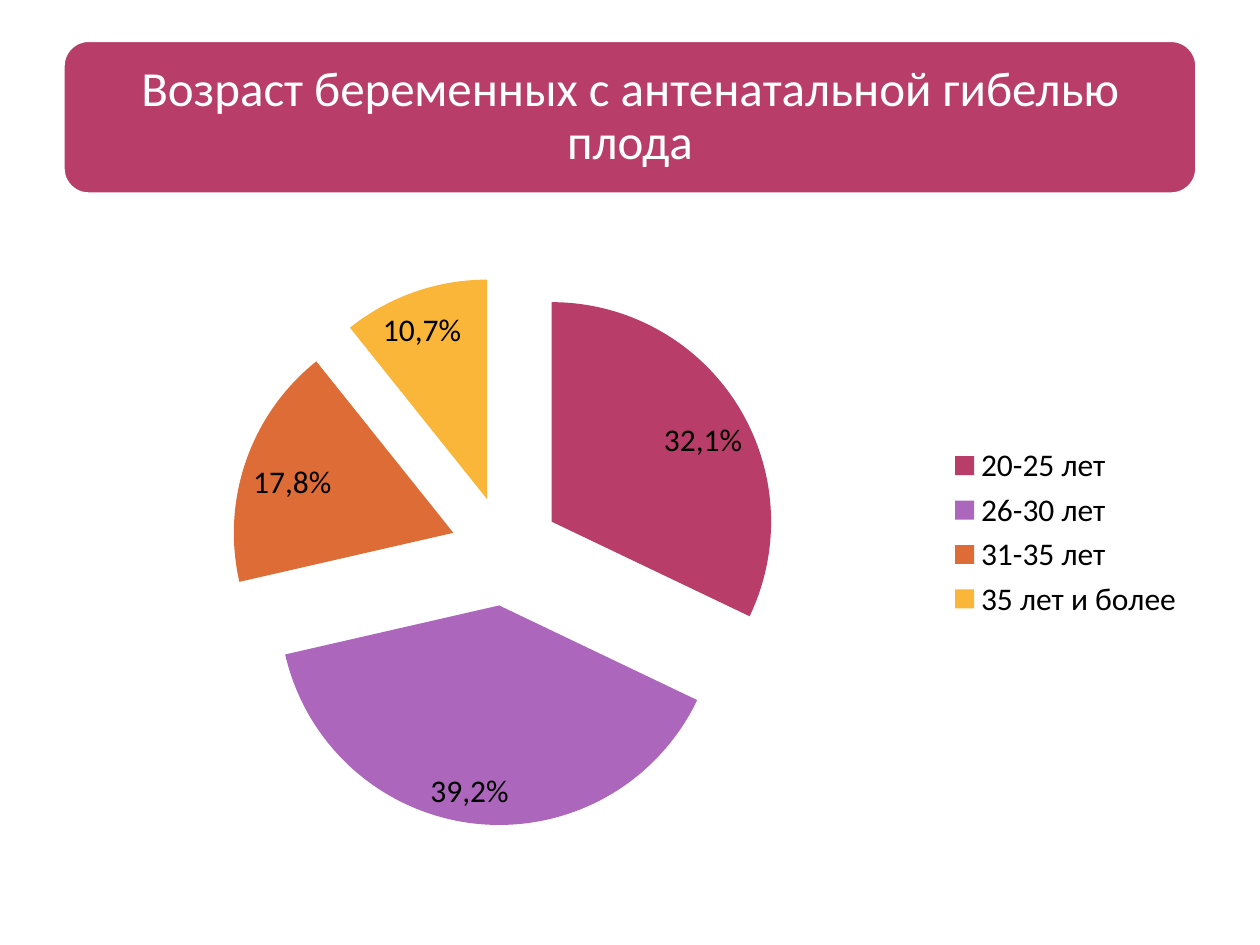
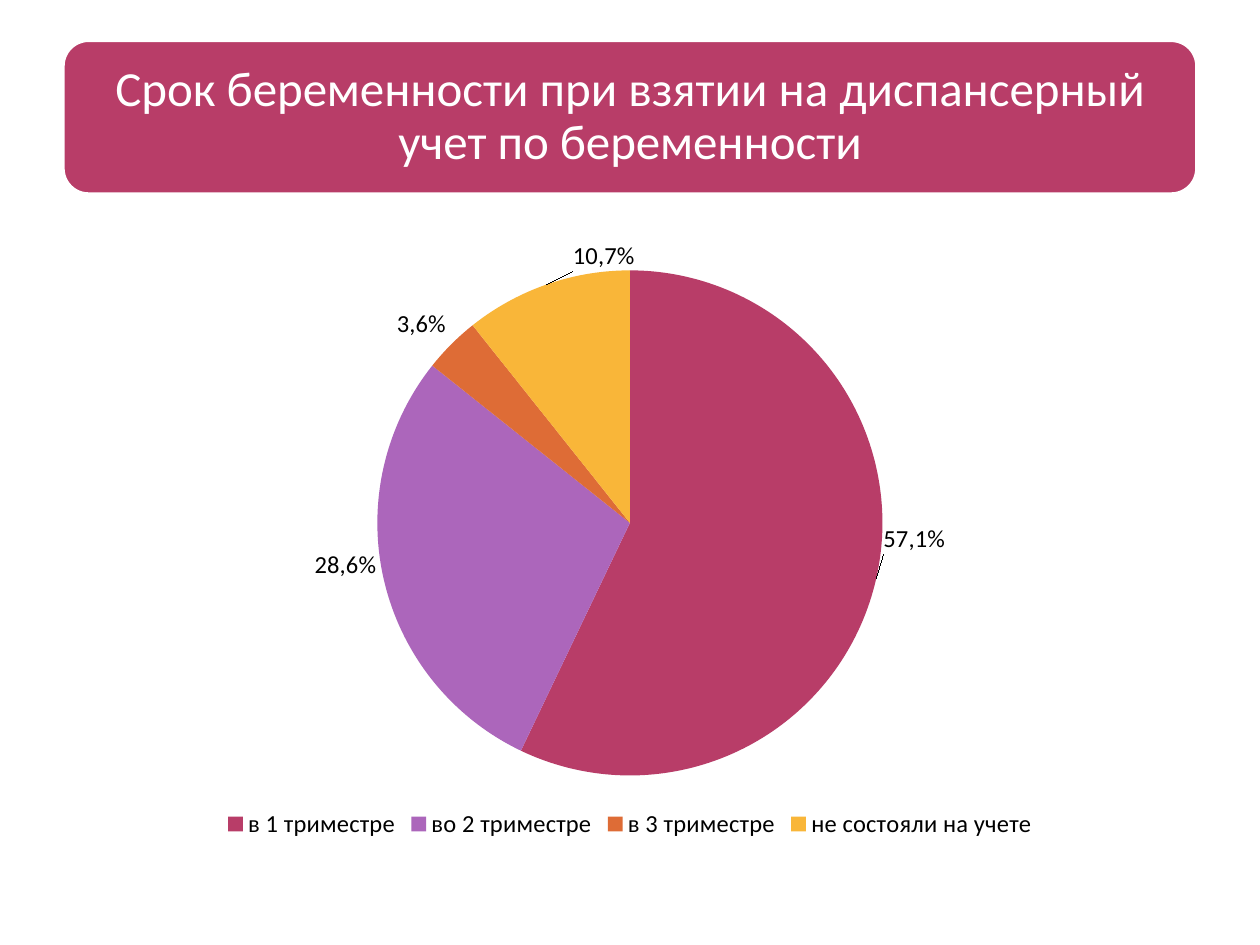
from pptx import Presentation
from pptx.chart.data import CategoryChartData as ChartData
from pptx.dml.color import RGBColor as RGB
from pptx.enum.chart import XL_CHART_TYPE as KIND, XL_LABEL_POSITION as SPOT
from pptx.enum.chart import XL_LEGEND_POSITION as SIDE
from pptx.enum.shapes import MSO_SHAPE as SHAPE
from pptx.enum.text import MSO_ANCHOR as ANCHOR, PP_ALIGN as ALIGN
from pptx.oxml import parse_xml
from pptx.oxml.ns import nsdecls, qn
from pptx.util import Inches, Pt

FONT = "Calibri"
FORMAT = "0.00%"
COLORS = {"rose": "B83D68", "violet": "AC66BB", "orange": "DE6C36",
          "amber": "F9B639", "white": "FFFFFF", "black": "000000"}
SLICES = ("rose", "violet", "orange", "amber")

PIES = (
    dict(title="Возраст беременных с антенатальной гибелью плода",
         cats=("20-25 лет", "26-30 лет", "31-35 лет", "35 лет и более"),
         vals=(0.32, 0.392, 0.178, 0.107),
         marks=("32,1%", "39,2%", "17,8%", "10,7%"),
         size=18, side=SIDE.RIGHT, spot=SPOT.INSIDE_END, explode=25,
         plot=(0.14, 0.09, 0.5, 0.88),
         shifts={0: (0.01, 0.02), 1: (-0.04, -0.01), 3: (-0.03, 0.02)}),
    dict(title="Срок беременности при взятии на диспансерный учет "
               "по беременности",
         cats=("в 1 триместре", "во 2 триместре", "в 3 триместре",
               "не состояли на учете"),
         vals=(0.571, 0.286, 0.036, 0.107),
         marks=("57,1%", "28,6%", "3,6%", "10,7%"),
         size=14, side=SIDE.BOTTOM, spot=SPOT.OUTSIDE_END, explode=0,
         plot=(0.27, 0.08, 0.46, 0.81),
         shifts={0: (0, -0.09), 1: (0, -0.05), 3: (0.08, -0.01)}),
)


def color(name):
    """Return a named colour."""
    return RGB.from_string(COLORS[name])


def style(font, size, tint="black"):
    """Set face, size and colour of a font."""
    font.name, font.size = FONT, Pt(size)
    font.color.rgb = color(tint)


def write(frame, text, size=18, tint="black", align=None, space=None):
    """Write one formatted paragraph into a text frame."""
    para = frame.paragraphs[0]
    para.alignment, para.line_spacing = align, space
    run = para.add_run()
    run.text = text
    style(run.font, size, tint)


def add_title(slide, text):
    """Add the rounded title band with its text."""
    group = slide.shapes.add_group_shape()
    band = group.shapes.add_shape(SHAPE.ROUNDED_RECTANGLE, Inches(0.5),
                                  Inches(0.32), Inches(9), Inches(1.22))
    band.shadow.inherit = False
    band.fill.solid()
    band.fill.fore_color.rgb = color("rose")
    band.line.color.rgb = color("white")
    band.line.width = Pt(2)
    box = group.shapes.add_textbox(Inches(0.56), Inches(0.38),
                                   Inches(8.88), Inches(1.1))
    frame = box.text_frame
    frame.word_wrap = True
    frame.vertical_anchor = ANCHOR.MIDDLE
    frame.margin_left = frame.margin_right = Inches(0.12)
    frame.margin_top = frame.margin_bottom = Inches(0.12)
    write(frame, text, size=28, tint="white", align=ALIGN.CENTER, space=0.9)


def layout(inner=False, **sides):
    """Make a manual chart layout from fractions of the chart."""
    parts = ""
    if inner:
        parts = ('<c:layoutTarget val="inner"/>'
                 '<c:xMode val="edge"/><c:yMode val="edge"/>')
    parts += "".join(f'<c:{key} val="{val}"/>' for key, val in sides.items())
    return parse_xml(f'<c:layout {nsdecls("c")}><c:manualLayout>{parts}'
                     '</c:manualLayout></c:layout>')


def place_plot(chart, x, y, w, h):
    """Fix the plot area inside the chart."""
    area = chart._chartSpace.chart.plotArea
    for old in area.findall(qn("c:layout")):
        area.remove(old)
    area.insert(0, layout(inner=True, x=x, y=y, w=w, h=h))


def add_labels(series, pie):
    """Write the slice labels and shift the ones that need it."""
    labels = series.data_labels
    labels.show_value = True
    labels.show_percentage = False
    labels.number_format = FORMAT
    labels.number_format_is_linked = False
    labels.position = pie["spot"]
    style(labels.font, pie["size"])
    for i, mark in enumerate(pie["marks"]):
        label = series.points[i].data_label
        write(label.text_frame, mark, size=pie["size"])
        label.position = pie["spot"]
        if i in pie["shifts"]:
            x, y = pie["shifts"][i]
            node = series._element.dLbls.findall(qn("c:dLbl"))[i]
            node.find(qn("c:idx")).addnext(layout(x=x, y=y))


def add_pie(slide, pie):
    """Add a pie chart with its legend and labels."""
    data = ChartData(number_format=FORMAT)
    data.categories = pie["cats"]
    data.add_series("Series 1", pie["vals"])
    chart = slide.shapes.add_chart(KIND.PIE, Inches(0.5), Inches(1.75),
                                   Inches(9), Inches(4.95), data).chart
    style(chart.font, 18)
    chart.has_title = False
    chart.has_legend = True
    chart.legend.position = pie["side"]
    chart.legend.include_in_layout = False
    style(chart.legend.font, pie["size"])
    plot = chart.plots[0]
    plot.vary_by_categories = True
    series = plot.series[0]
    for i, name in enumerate(SLICES):
        fill = series.points[i].format.fill
        fill.solid()
        fill.fore_color.rgb = color(name)
    if pie["explode"]:
        burst = parse_xml(f'<c:explosion {nsdecls("c")} '
                          f'val="{pie["explode"]}"/>')
        series._element.find(qn("c:dPt")).addprevious(burst)
    add_labels(series, pie)
    place_plot(chart, *pie["plot"])


def main():
    """Build the slides and save them."""
    deck = Presentation()
    deck.slide_width, deck.slide_height = Inches(10), Inches(7.5)
    for pie in PIES:
        slide = deck.slides.add_slide(deck.slide_layouts[6])
        add_title(slide, pie["title"])
        add_pie(slide, pie)
    deck.save("out.pptx")


main()
